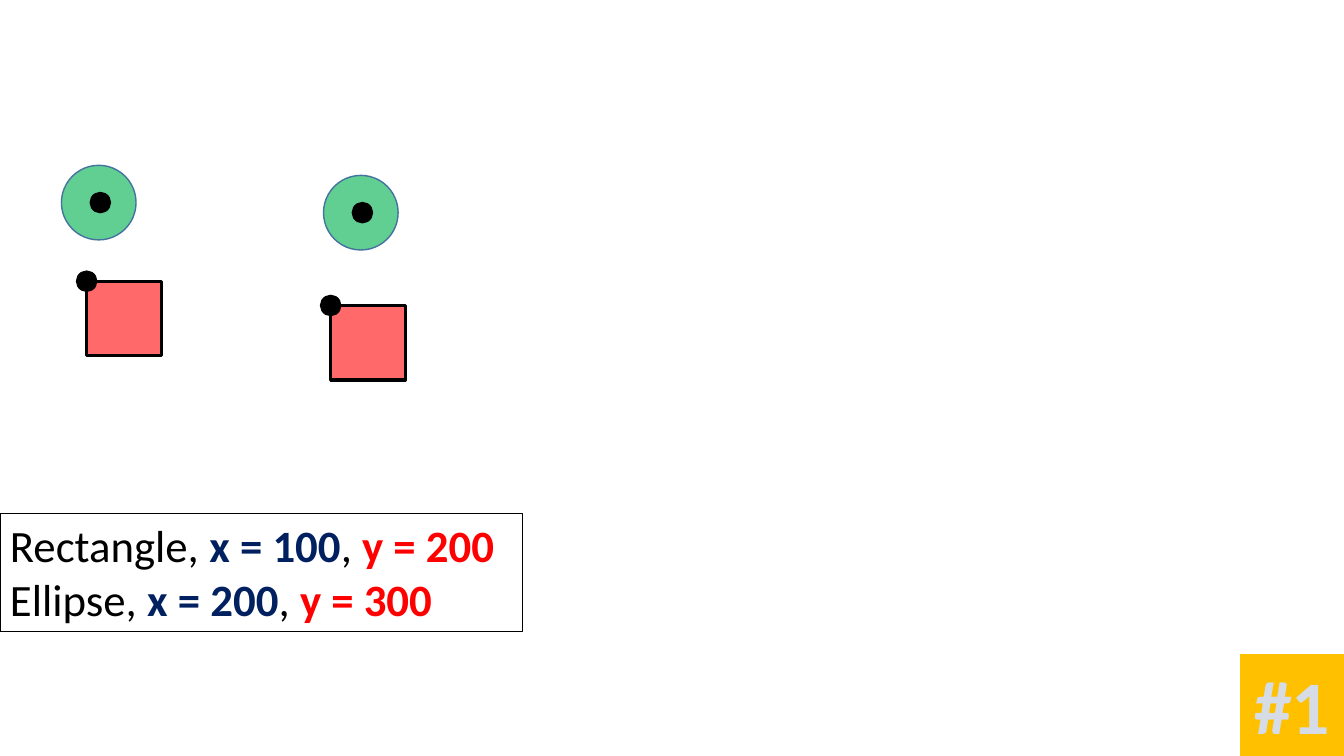
import pptx
import pptx.util
import pptx.dml.color
import pptx.enum.dml
import pptx.enum.shapes
import pptx.enum.text
import pptx.oxml
from lxml import etree

Pt = pptx.util.Pt
KIND = pptx.enum.shapes.MSO_SHAPE
TEXT = pptx.enum.text
HUES = {
    "black": "000000", "red": "FF0000", "green": "00B050", "navy": "002060",
    "rim": "43739E", "gold": "FFC000", "slate": "44546A", "pale": "D6DCE5",
    "edge": "333F50",
}
SIDE, DOT = 53.3, 14.4


def hue(name):
    return pptx.dml.color.RGBColor.from_string(HUES[name])


def draw(shapes, kind, box, fill=None, line=None, width=1, alpha=100):
    shape = shapes.add_shape(kind, *map(Pt, box))
    shape.shadow.inherit = False
    if fill:
        shape.fill.solid()
        shape.fill.fore_color.rgb = hue(fill)
        if alpha < 100:
            color = shape.fill._xPr.find(".//" + pptx.oxml.ns.qn("a:srgbClr"))
            etree.SubElement(color, pptx.oxml.ns.qn("a:alpha"), val=str(alpha * 1000))
    else:
        shape.fill.background()
    if line:
        shape.line.color.rgb = hue(line)
        shape.line.width = Pt(width)
    else:
        shape.line.fill.background()
    return shape


def frame_text(shape):
    frame = shape.text_frame
    frame.word_wrap = True
    frame.auto_size = TEXT.MSO_AUTO_SIZE.SHAPE_TO_FIT_TEXT
    frame.vertical_anchor = TEXT.MSO_ANCHOR.TOP
    return frame


def add_square(slide, left, top):
    shapes = slide.shapes.add_group_shape().shapes
    draw(shapes, KIND.RECTANGLE, (left, top, SIDE, SIDE), "red", "black", 2.25, 59)
    draw(shapes, KIND.OVAL, (left - DOT / 2, top - DOT / 2, DOT, DOT), "black", "black")


def add_disc(slide, left, top):
    shapes = slide.shapes.add_group_shape().shapes
    draw(shapes, KIND.OVAL, (left, top, SIDE, SIDE), "green", "rim", 1, 62)
    draw(shapes, KIND.OVAL, (left + 20.6, top + 19.4, DOT, DOT), "black", "black")


def add_coords(slide, box, rows):
    frame = frame_text(draw(slide.shapes, KIND.RECTANGLE, box, line="black", width=0.75))
    for index, (name, x, y) in enumerate(rows):
        para = frame.add_paragraph() if index else frame.paragraphs[0]
        para.alignment = TEXT.PP_ALIGN.LEFT
        parts = [(f"{name}, ", "black"), (f"x = {x}", "navy"),
                 (", ", "black"), (f"y = {y}", "red")]
        for text, color in parts:
            run = para.add_run()
            run.text = text
            run.font.name = "Calibri"
            run.font.size = Pt(32)
            run.font.bold = color != "black"
            run.font.color.rgb = hue(color)


def add_badge(slide, box, label):
    frame = frame_text(draw(slide.shapes, KIND.RECTANGLE, box, "gold"))
    frame.text = label
    para = frame.paragraphs[0]
    para.alignment = TEXT.PP_ALIGN.CENTER
    font = para.runs[0].font
    font.name, font.size, font.bold = "Calibri", Pt(54), True
    font.fill.patterned()
    font.fill.pattern = pptx.enum.dml.MSO_PATTERN.DARK_UPWARD_DIAGONAL
    font.fill.fore_color.rgb = hue("slate")
    font.fill.back_color.rgb = hue("pale")
    rim = pptx.oxml.parse_xml(
        f'<a:ln {pptx.oxml.ns.nsdecls("a")} w="12700"><a:solidFill>'
        f'<a:srgbClr val="{HUES["edge"]}"/></a:solidFill></a:ln>')
    font._rPr.insert(0, rim)


def main():
    deck = pptx.Presentation()
    deck.slide_width, deck.slide_height = Pt(960), Pt(540)
    slide = deck.slides.add_slide(deck.slide_layouts[6])
    add_coords(slide, (0, 366.5, 373, 84.8),
               [("Rectangle", 100, 200), ("Ellipse", 200, 300)])
    add_square(slide, 61.9, 200.9)
    add_disc(slide, 231.1, 125.3)
    add_square(slide, 236.2, 218.2)
    add_disc(slide, 43.9, 118.1)
    add_badge(slide, (885.8, 467.3, 74.2, 72.7), "#1")
    deck.save("out.pptx")


if __name__ == "__main__":
    main()
